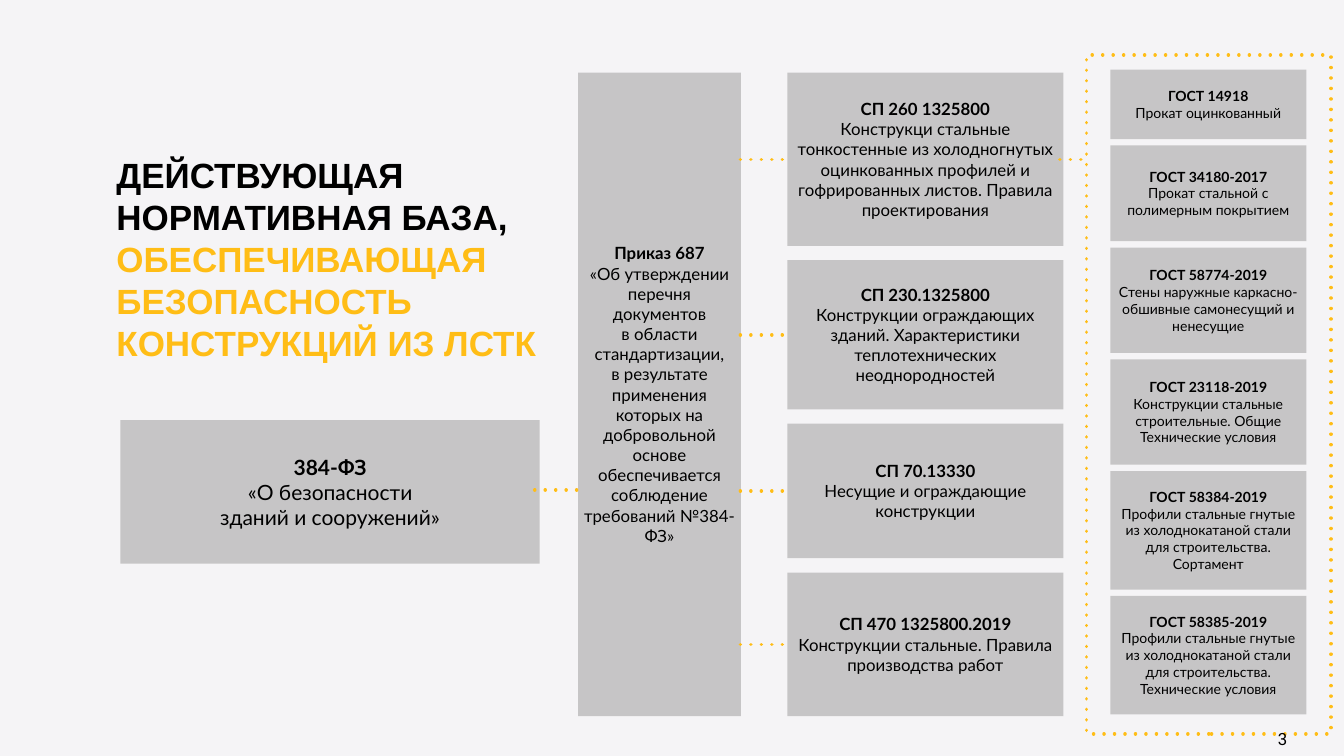
from lxml import etree
from pptx import Presentation
from pptx.dml.color import RGBColor
from pptx.enum.shapes import MSO_CONNECTOR as Conn, MSO_SHAPE as Shape
from pptx.enum.text import MSO_ANCHOR as Anchor, PP_ALIGN as Align
from pptx.oxml.ns import qn
from pptx.util import Inches, Pt

BACK = RGBColor(0xF5, 0xF4, 0xF6)
GREY = RGBColor(0xC6, 0xC5, 0xC6)
GOLD = RGBColor(0xFF, 0xBD, 0x16)
BLACK = RGBColor(0, 0, 0)

COLS, ROWS = 160, 90
TOP = 8.64
ORDER_X, ORDER_W = 68.82, 19.38
RULES_X, RULES_W, RULES_GAP = 93.72, 32.88, 1.7
GOST_X, GOST_W, GOST_TOP, GOST_GAP = 132.18, 23.34, 8.28, 0.76

RULES = [
    (20.64, "СП 260 1325800", "Конструкци стальные тонкостенные из холодногнутых "
     "оцинкованных профилей и гофрированных листов. Правила проектирования"),
    (17.76, "СП 230.1325800", "Конструкции ограждающих зданий. Характеристики "
     "теплотехнических неоднородностей"),
    (16.02, "СП 70.13330", "Несущие и ограждающие конструкции"),
    (17.1, "СП 470 1325800.2019", "Конструкции стальные. Правила производства работ"),
]
PROFILES = "Профили стальные гнутые из холоднокатаной стали для строительства. "
GOSTS = [
    (8.28, "ГОСТ 14918", "Прокат оцинкованный"),
    (11.4, "ГОСТ 34180-2017", "Прокат стальной с полимерным покрытием"),
    (12.54, "ГОСТ 58774-2019", "Стены наружные каркасно-обшивные самонесущий и ненесущие"),
    (12.54, "ГОСТ 23118-2019", "Конструкции стальные строительные. Общие Технические условия"),
    (14.1, "ГОСТ 58384-2019", PROFILES + "Сортамент"),
    (14.1, "ГОСТ 58385-2019", PROFILES + "Технические условия"),
]


class Deck:
    """Draws styled elements on the current slide, measured in grid cells."""

    def __init__(self):
        self.prs = Presentation()
        self.prs.slide_width, self.prs.slide_height = Inches(26.67), Inches(15)
        self.s = self.prs.slides.add_slide(self.prs.slide_layouts[6])
        self.s.background.fill.solid()
        self.s.background.fill.fore_color.rgb = BACK

    def grid(self, x, y, w, h):
        dx, dy = self.prs.slide_width / COLS, self.prs.slide_height / ROWS
        return round(x * dx), round(y * dy), round(w * dx), round(h * dy)

    def frame(self, sp, anchor):
        tf = sp.text_frame
        tf.word_wrap = True
        tf.vertical_anchor = anchor
        tf.margin_left = tf.margin_right = tf.margin_top = tf.margin_bottom = Inches(0.06)
        return tf

    def lines(self, p, text, size, bold, font="Lato", align=Align.CENTER):
        p.alignment = align
        p.font.size, p.font.name, p.font.color.rgb = Pt(size), font, BLACK
        for i, line in enumerate(text.split("\n")):
            if i:
                p.add_line_break()
            self.run(p, line, bold)

    def run(self, p, text, bold):
        r = p.add_run()
        r.text, r.font.bold = text, bold
        return r

    def text(self, at, text, size, bold, font, align, anchor):
        tf = self.frame(self.s.shapes.add_textbox(*self.grid(*at)), anchor)
        p = tf.paragraphs[0]
        self.lines(p, text, size, bold, font, align)
        return p

    def rect(self, at):
        sp = self.s.shapes.add_shape(Shape.RECTANGLE, *self.grid(*at))
        sp.shadow.inherit = False
        return sp

    def card(self, at, head, body, size, split=False):
        sp = self.rect(at)
        sp.fill.solid()
        sp.fill.fore_color.rgb = GREY
        sp.line.fill.background()
        tf = self.frame(sp, Anchor.MIDDLE)
        p = tf.paragraphs[0]
        self.lines(p, head, size, True)
        if split:
            p = tf.add_paragraph()
        else:
            p.add_line_break()
        self.lines(p, body, size, False)

    def stack(self, x, y, w, gap, items, size, split=False):
        centres = []
        for h, head, body in items:
            self.card((x, y, w, h), head, body, size, split)
            centres.append(y + h / 2)
            y += h + gap
        return centres

    def dots(self, line):
        line.color.rgb, line.width = GOLD, Pt(5)
        ln = line._get_or_add_ln()
        ln.set("cap", "rnd")
        dash = etree.Element(qn("a:custDash"))
        etree.SubElement(dash, qn("a:ds"), d="100000", sp="200000")
        ln.find(qn("a:solidFill")).addnext(dash)

    def outline(self, at):
        sp = self.rect(at)
        sp.fill.background()
        self.dots(sp.line)

    def connect(self, x1, x2, y):
        left, top, right, _ = self.grid(x1, y, x2, 0)
        c = self.s.shapes.add_connector(Conn.STRAIGHT, left, top, right, top)
        self.dots(c.line)
        etree.SubElement(c._element.spPr, qn("a:effectLst"))


def main():
    d = Deck()
    p = d.text((13.5, 17.94, 56.22, 25.92), "ДЕЙСТВУЮЩАЯ НОРМАТИВНАЯ БАЗА,", 50, True,
               "Arial", Align.LEFT, Anchor.TOP)
    p.add_line_break()
    r = d.run(p, "ОБЕСПЕЧИВАЮЩАЯ БЕЗОПАСНОСТЬ КОНСТРУКЦИЙ ИЗ ЛСТК", True)
    r.font.color.rgb = GOLD

    d.card((14.34, 50, 49.92, 17.1), "384-ФЗ", "«О безопасности\nзданий и сооружений»", 30)
    d.card((ORDER_X, TOP, ORDER_W, 76.62), "Приказ 687",
           "«Об утверждении перечня документов\nв области стандартизации,\n"
           "в результате применения которых на добровольной основе "
           "обеспечивается соблюдение требований №384-ФЗ»", 24)
    centres = d.stack(RULES_X, TOP, RULES_W, RULES_GAP, RULES, 24)
    d.stack(GOST_X, GOST_TOP, GOST_W, GOST_GAP, GOSTS, 20, split=True)

    d.connect(63.66, 68.7, 58.32)
    for y in centres:
        d.connect(88.14, 93.24, y)
    d.outline((129.36, 6.54, 29.1, 80.82))
    d.connect(126.18, 129.12, centres[0])

    p = d.text((148.8, 86.64, 7.8, 2.88), "3", 24, False, "Roboto", Align.CENTER, Anchor.MIDDLE)
    p.line_spacing = 0.9
    d.prs.save("out.pptx")


if __name__ == "__main__":
    main()
